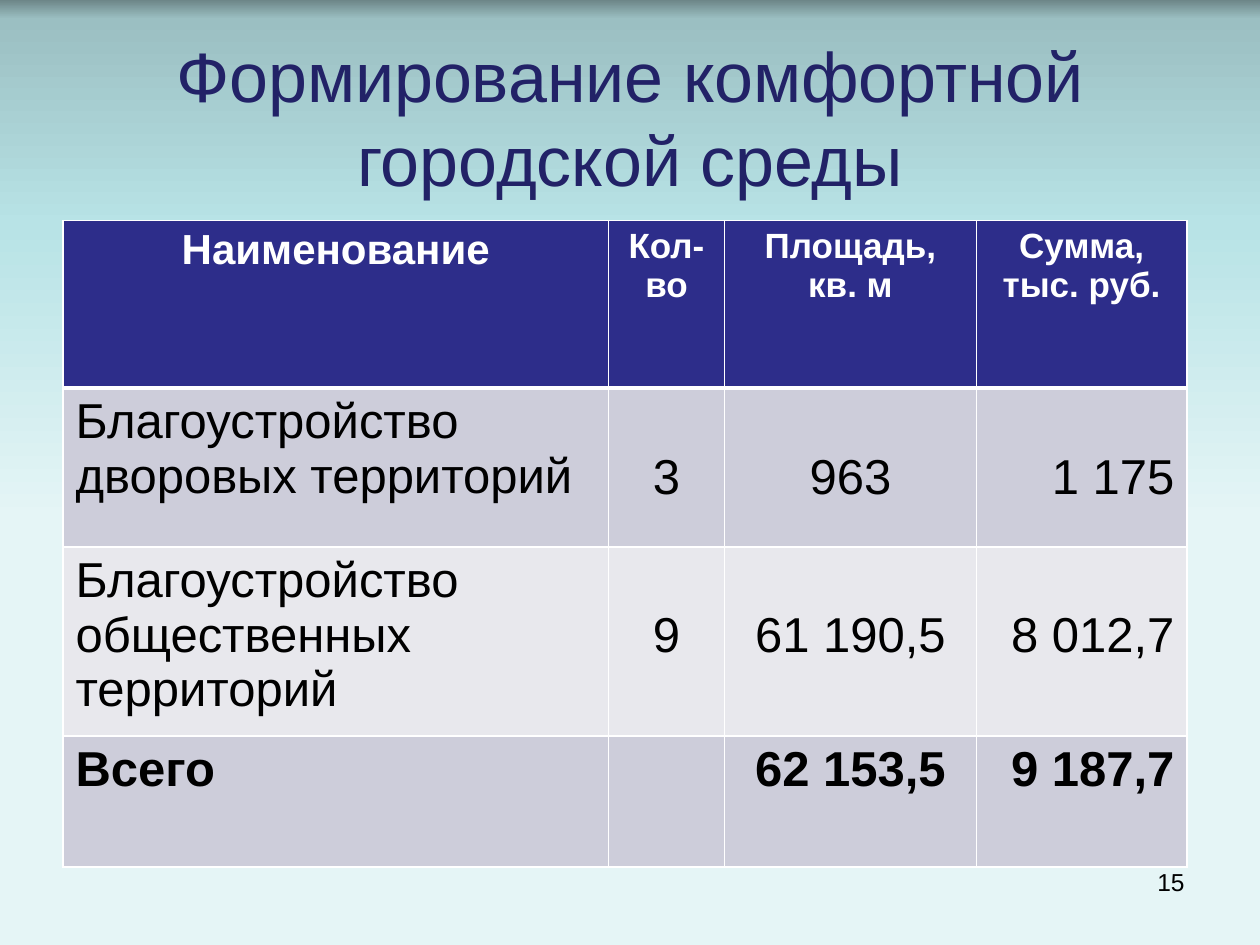
import pptx
import pptx.dml.color
import pptx.enum.text
import pptx.oxml.ns
import pptx.util
import lxml.etree
from dataclasses import dataclass

ALIGN = pptx.enum.text.PP_ALIGN
ANCHOR = pptx.enum.text.MSO_ANCHOR


@dataclass(frozen=True)
class Theme:
    font: str = "Arial"
    title: str = "222267"
    header: str = "2D2D8A"
    white: str = "FFFFFF"
    ink: str = "000000"
    bands: tuple = ("CDCDDA", "E8E8ED")
    # Share of the height (percent) and colour, top to bottom
    backdrop: tuple = ((0, "6D8688"), (2, "9BBFC2"), (24, "B8E3E6"), (55, "E5F5F6"))
    title_size: int = 40
    body_size: int = 28
    header_size: int = 24
    small_header_size: int = 20
    number_size: int = 14


THEME = Theme()
WIDTH, HEIGHT = 10, 7.5
COLUMNS = (4.33, 0.92, 2, 1.67)
ROWS = (1.33, 1.26, 1.4, 1.04)
COLUMN_ALIGN = (ALIGN.LEFT, ALIGN.CENTER, ALIGN.CENTER, ALIGN.RIGHT)
SECOND_LINE = 0.49  # top margin that puts figures beside the name's second line

HEADER = ("Наименование", "Кол-во", "Площадь, кв. м", "Сумма, тыс. руб.")
WORKS = (
    ("Благоустройство дворовых территорий", "3", "963", "1 175"),
    ("Благоустройство общественных территорий", "9", "61 190,5", "8 012,7"),
)
TOTAL = ("Всего", "", "62 153,5", "9 187,7")


def rgb(colour):
    return pptx.dml.color.RGBColor.from_string(colour)


def add_element(parent, tag, **attributes):
    return lxml.etree.SubElement(parent, pptx.oxml.ns.qn(tag), attributes)


def write(frame, text, size, colour, align, bold=False):
    para = frame.paragraphs[0]
    para.alignment = align
    if not text:
        para.font.size = pptx.util.Pt(size)
        return
    span = para.add_run()
    span.text = text
    span.font.name = THEME.font
    span.font.size = pptx.util.Pt(size)
    span.font.bold = bold
    span.font.color.rgb = rgb(colour)


def paint_backdrop(page):
    fill = page.background.fill
    fill.gradient()
    fill.gradient_angle = 270  # runs from top to bottom
    stops = page.background._cSld.find(".//" + pptx.oxml.ns.qn("a:gsLst"))
    for stop in list(stops):
        stops.remove(stop)
    for share, colour in THEME.backdrop:
        stop = add_element(stops, "a:gs", pos=str(share * 1000))
        add_element(stop, "a:srgbClr", val=colour)


def add_text(page, area, text, size, colour, align, anchor):
    box = page.shapes.add_textbox(*map(pptx.util.Inches, area))
    frame = box.text_frame
    frame.word_wrap = True
    frame.vertical_anchor = anchor
    write(frame, text, size, colour, align)


def border_cell(cell, bottom_width):
    properties = cell._tc.get_or_add_tcPr()
    widths = (("a:lnL", 1), ("a:lnR", 1), ("a:lnT", 1), ("a:lnB", bottom_width))
    for position, (tag, width) in enumerate(widths):
        line = add_element(properties, tag, w=str(pptx.util.Pt(width)))
        add_element(add_element(line, "a:solidFill"), "a:srgbClr", val=THEME.white)
        properties.insert(position, line)  # borders come before the fill


def fill_cell(cell, text, fill, size, colour, align, bold, bottom_width=1):
    cell.fill.solid()
    cell.fill.fore_color.rgb = rgb(fill)
    border_cell(cell, bottom_width)
    write(cell.text_frame, text, size, colour, align, bold)


def add_works_table(page, left, top):
    area = (left, top, sum(COLUMNS), sum(ROWS))
    table = page.shapes.add_table(
        len(ROWS), len(COLUMNS), *map(pptx.util.Inches, area)).table
    for column, width in zip(table.columns, COLUMNS):
        column.width = pptx.util.Inches(width)
    for row, height in zip(table.rows, ROWS):
        row.height = pptx.util.Inches(height)

    # Header
    for index, text in enumerate(HEADER):
        size = THEME.small_header_size if index else THEME.header_size
        fill_cell(table.cell(0, index), text, THEME.header, size,
                  THEME.white, ALIGN.CENTER, True, bottom_width=3)

    # Works, then the total in bold
    for number, values in enumerate((*WORKS, TOTAL)):
        is_total = values is TOTAL
        for index, text in enumerate(values):
            cell = table.cell(number + 1, index)
            fill_cell(cell, text, THEME.bands[number % 2], THEME.body_size,
                      THEME.ink, COLUMN_ALIGN[index], is_total)
            if index and not is_total:
                cell.margin_top = pptx.util.Inches(SECOND_LINE)


def build():
    deck = pptx.Presentation()
    deck.slide_width = pptx.util.Inches(WIDTH)
    deck.slide_height = pptx.util.Inches(HEIGHT)
    page = deck.slides.add_slide(deck.slide_layouts[6])

    paint_backdrop(page)
    # Title
    add_text(page, (0.5, 0.3, 9, 1.25), "Формирование комфортной городской среды",
             THEME.title_size, THEME.title, ALIGN.CENTER, ANCHOR.MIDDLE)
    add_works_table(page, 0.5, 1.75)
    # Page number
    add_text(page, (7.17, 6.83, 2.33, 0.52), "15",
             THEME.number_size, THEME.ink, ALIGN.RIGHT, ANCHOR.TOP)
    deck.save("out.pptx")


if __name__ == "__main__":
    build()
